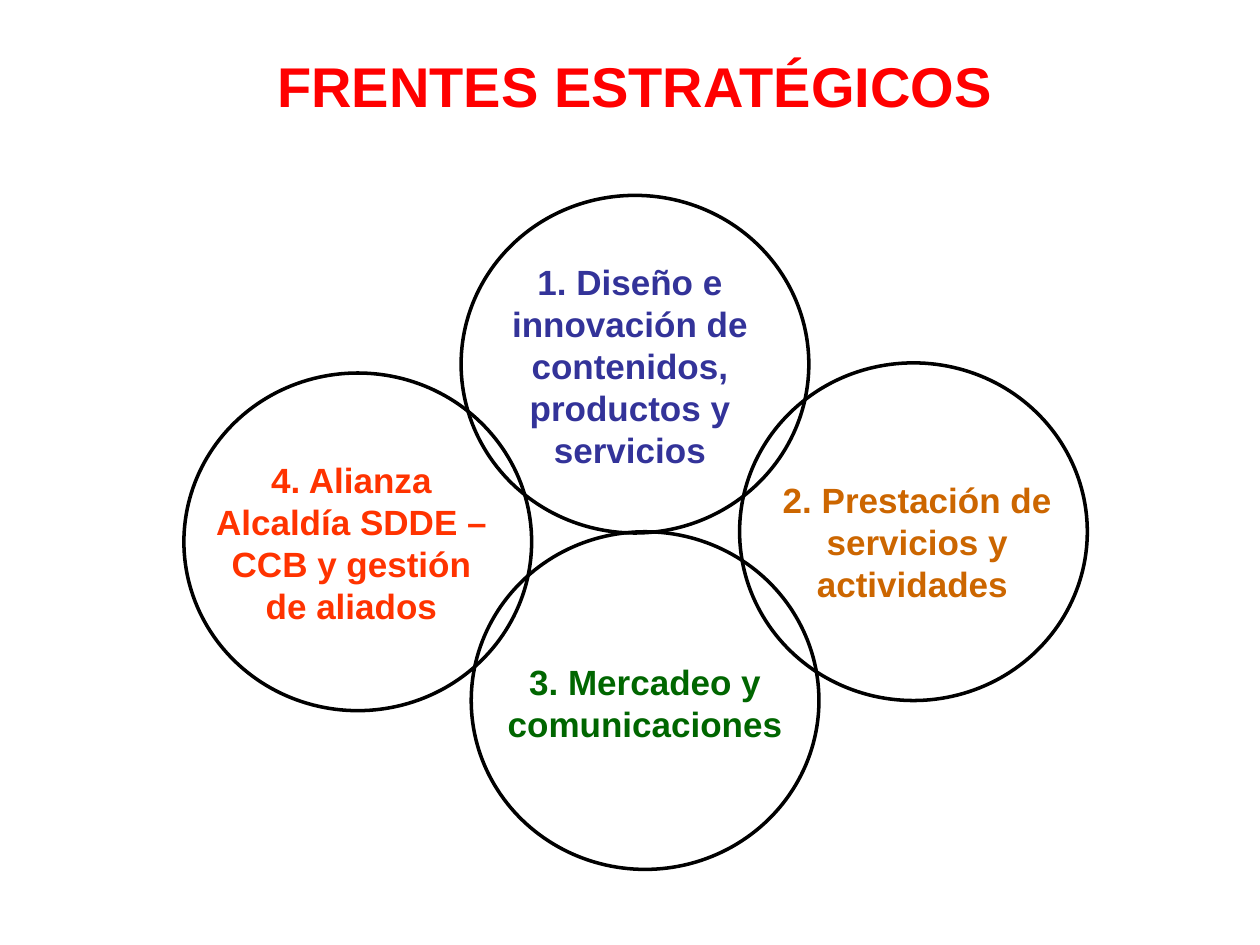
"""Build a slide with four overlapping circles, one for each strategic front."""
from dataclasses import dataclass

from pptx import Presentation, util as u
from pptx.dml.color import RGBColor
from pptx.enum import shapes, text

SLIDE_WIDTH, SLIDE_HEIGHT = u.Inches(10), u.Inches(7.5)


@dataclass(frozen=True)
class Theme:
    font: str = "Arial"
    title_size: int = 32
    label_size: int = 20
    outline_width: int = 2
    title: str = "FF0000"
    outline: str = "000000"
    design: str = "333399"
    services: str = "CC6600"
    marketing: str = "006600"
    alliance: str = "FF3300"


@dataclass(frozen=True)
class Area:
    """Lengths in percent of the slide's width and height."""
    left: float
    top: float
    width: float
    height: float

    def lengths(self) -> tuple[int, int, int, int]:
        return (int(SLIDE_WIDTH * self.left / 100), int(SLIDE_HEIGHT * self.top / 100),
                int(SLIDE_WIDTH * self.width / 100), int(SLIDE_HEIGHT * self.height / 100))


@dataclass(frozen=True)
class Front:
    label: str
    color: str
    circle_left: float
    circle_top: float
    label_area: Area


THEME = Theme()
CIRCLE_WIDTH, CIRCLE_HEIGHT = 27.6, 35.73
TITLE_AREA = Area(5.1, 4.8, 90.6, 8.4)
FRONTS = (
    Front("3. Mercadeo y comunicaciones", THEME.marketing,
          37.4, 56.27, Area(39, 69.2, 24.4, 10.27)),
    Front("1. Diseño e innovación de contenidos, productos y servicios", THEME.design,
          36.6, 20.67, Area(38.2, 26.93, 23.6, 23.6)),
    Front("4. Alianza Alcaldía SDDE – CCB y gestión de aliados", THEME.alliance,
          14.6, 39.47, Area(16.1, 47.87, 23.6, 19.07)),
    Front("2. Prestación de servicios y actividades ", THEME.services,
          58.7, 38.4, Area(61, 50, 23.6, 14.67)),
)


def add_circle(page, front: Front) -> None:
    area = Area(front.circle_left, front.circle_top, CIRCLE_WIDTH, CIRCLE_HEIGHT)
    circle = page.shapes.add_shape(shapes.MSO_SHAPE.OVAL, *area.lengths())
    circle.shadow.inherit = False
    circle.fill.background()
    circle.line.color.rgb = RGBColor.from_string(THEME.outline)
    circle.line.width = u.Pt(THEME.outline_width)


def add_text(page, area: Area, words: str, size: int, color: str) -> None:
    box = page.shapes.add_textbox(*area.lengths())
    box.text_frame.word_wrap = True
    box.text_frame.auto_size = text.MSO_AUTO_SIZE.SHAPE_TO_FIT_TEXT
    para = box.text_frame.paragraphs[0]
    para.alignment = text.PP_ALIGN.CENTER
    span = para.add_run()
    span.text = words
    span.font.name = THEME.font
    span.font.size = u.Pt(size)
    span.font.bold = True
    span.font.color.rgb = RGBColor.from_string(color)


def main() -> None:
    deck = Presentation()
    deck.slide_width, deck.slide_height = SLIDE_WIDTH, SLIDE_HEIGHT
    page = deck.slides.add_slide(deck.slide_layouts[6])
    for front in FRONTS:
        add_circle(page, front)
    for front in FRONTS:
        add_text(page, front.label_area, front.label, THEME.label_size, front.color)
    add_text(page, TITLE_AREA, "FRENTES ESTRATÉGICOS", THEME.title_size, THEME.title)
    deck.save("out.pptx")


if __name__ == "__main__":
    main()
